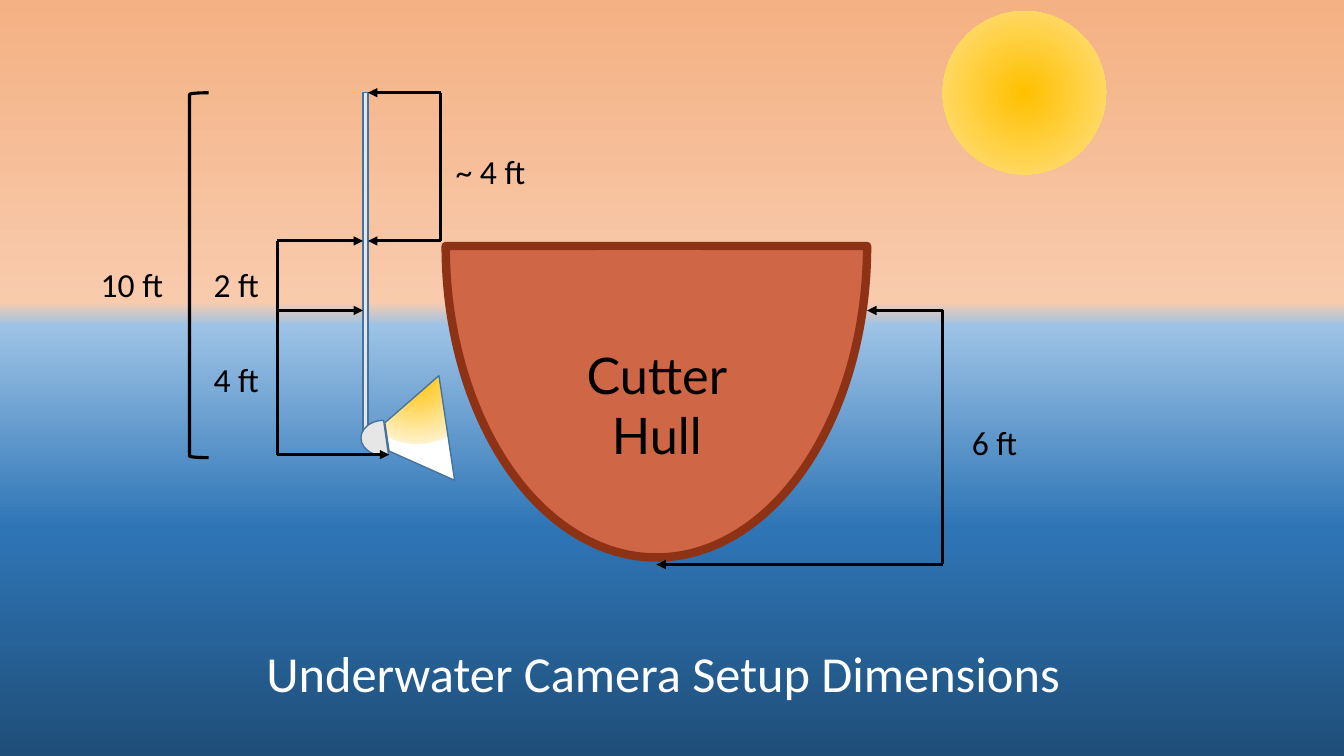
"""Build the underwater camera setup dimensions slide."""
from lxml import etree
from pptx import Presentation
from pptx import util as u
from pptx.dml.color import RGBColor
from pptx.enum import shapes, text
from pptx.oxml.ns import qn

BLACK = RGBColor(0, 0, 0)
WHITE = RGBColor(255, 255, 255)
HULL = RGBColor(0xCF, 0x66, 0x45)
HULL_EDGE = RGBColor(0x8D, 0x32, 0x15)
CAMERA = RGBColor(0xE7, 0xE6, 0xE6)
CAMERA_EDGE = RGBColor(0x43, 0x73, 0x9E)

SKY_AND_SEA = [(0, "F4B183"), (40, "F8CBAD"), (43, "9DC3E6"), (70, "2E75B6"), (100, "1F4E79")]
SUNLIGHT = [(0, "FFC000"), (75, "FFD966"), (100, "FFE699")]
LAMPLIGHT = [(0, "FFC000"), (100, "FFF2CC"), (100, "FFFFFF")]

POLE_TOP, DECK, WATERLINE, CAMERA_BOTTOM, KEEL = 0.92, 2.39, 3.08, 4.51, 5.6
POLE_LEFT, POLE_RIGHT = 3.6, 3.65
LEFT_RULE, MIDDLE_RULE, RIGHT_RULE = 2.75, 4.37, 9.35

ARROWS = [
    (MIDDLE_RULE, POLE_TOP, POLE_RIGHT), (MIDDLE_RULE, DECK, POLE_RIGHT),
    (LEFT_RULE, DECK, POLE_LEFT), (LEFT_RULE, WATERLINE, POLE_LEFT),
    (LEFT_RULE, CAMERA_BOTTOM, 3.86),
    (RIGHT_RULE, WATERLINE, 8.6), (RIGHT_RULE, KEEL, 6.51),
]
RULES = [
    (MIDDLE_RULE, POLE_TOP, DECK), (LEFT_RULE, DECK, WATERLINE),
    (LEFT_RULE, WATERLINE, CAMERA_BOTTOM), (RIGHT_RULE, WATERLINE, KEEL),
]
DIMENSIONS = [
    ("6 ft", 9.54, 4.14, 0.9), ("~ 4 ft", 4.42, 1.45, 1.01), ("2 ft", 2.02, 2.57, 0.9),
    ("4 ft", 2.02, 3.51, 0.79), ("10 ft", 0.9, 2.57, 0.93),
]


def set_gradient(fill, owner, stops, focus=None):
    fill.gradient()
    gradient = next(owner.iter(qn("a:gradFill")))
    for child in list(gradient):
        gradient.remove(child)
    gradient.set("rotWithShape", "0")
    stop_list = etree.SubElement(gradient, qn("a:gsLst"))
    for position, color in stops:
        stop = etree.SubElement(stop_list, qn("a:gs"), pos=str(position * 1000))
        etree.SubElement(stop, qn("a:srgbClr"), val=color)
    if focus:
        circle = etree.SubElement(gradient, qn("a:path"), path="circle")
        edges = {side: str(value * 1000) for side, value in zip("ltrb", focus)}
        etree.SubElement(circle, qn("a:fillToRect"), **edges)
    else:
        etree.SubElement(gradient, qn("a:lin"), ang="5400000", scaled="0")


def add_shape(slide, kind, box, fill=None, line=None, width=1, adjustments=(), rotation=0):
    shape = slide.shapes.add_shape(kind, *map(u.Inches, box))
    shape.shadow.inherit = False
    shape.rotation = rotation
    for index, value in enumerate(adjustments):
        shape.adjustments[index] = value
    if fill is None:
        shape.fill.background()
    else:
        shape.fill.solid()
        shape.fill.fore_color.rgb = fill
    if line is None:
        shape.line.fill.background()
    else:
        shape.line.color.rgb = line
        shape.line.width = u.Pt(width)
    return shape


def add_line(slide, start, end, color=BLACK, width=2.25, arrow=False):
    connector = slide.shapes.add_connector(
        shapes.MSO_CONNECTOR.STRAIGHT, *map(u.Inches, start + end))
    connector.line.color.rgb = color
    connector.line.width = u.Pt(width)
    if arrow:
        etree.SubElement(connector.line._get_or_add_ln(), qn("a:tailEnd"), type="triangle")
    etree.SubElement(connector._element.spPr, qn("a:effectLst"))


def add_text(slide, lines, box, size, font="Calibri", color=BLACK, align=text.PP_ALIGN.LEFT):
    frame = slide.shapes.add_textbox(*map(u.Inches, box)).text_frame
    frame.word_wrap = True
    frame.text = "\n".join(lines)
    for paragraph in frame.paragraphs:
        paragraph.alignment = align
        paragraph.font.size = u.Pt(size)
        paragraph.font.name = font
        paragraph.font.color.rgb = color


def main():
    presentation = Presentation()
    presentation.slide_width, presentation.slide_height = u.Inches(13.33), u.Inches(7.5)
    slide = presentation.slides.add_slide(presentation.slide_layouts[6])
    set_gradient(slide.background.fill, slide._element, SKY_AND_SEA)
    kinds = shapes.MSO_SHAPE
    center = text.PP_ALIGN.CENTER

    add_shape(slide, kinds.BLOCK_ARC, (4.42, -0.65, 4.18, 6.18), HULL, HULL_EDGE, 6,
              (108, 0, 0.499), 180)
    add_shape(slide, kinds.RECTANGLE, (5.94, 2.44, 1.01, 2.38), HULL, HULL)
    add_line(slide, (5.86, 2.44), (7.03, 2.44), HULL_EDGE, 6)
    add_text(slide, ["Cutter", "Hull"], (5.01, 3.36, 3.01, 1.31), 36, "Lato", align=center)

    sun = add_shape(slide, kinds.FLOWCHART_CONNECTOR, (9.35, 0.11, 1.62, 1.62))
    set_gradient(sun.fill, sun._element, SUNLIGHT, (50, 50, 50, 50))

    add_shape(slide, kinds.RECTANGLE, (POLE_LEFT, POLE_TOP, 0.05, 3.45), CAMERA, CAMERA_EDGE)
    add_shape(slide, kinds.CHORD, (3.58, 4.17, 0.45, 0.35), CAMERA, CAMERA_EDGE,
              adjustments=(44.452, 162))
    beam = add_shape(slide, kinds.TRAPEZOID, (3.61, 3.99, 1.05, 0.6), line=CAMERA_EDGE,
                     adjustments=(0.639,), rotation=261.5)
    set_gradient(beam.fill, beam._element, LAMPLIGHT, (50, -80, 50, 180))

    for start, level, end in ARROWS:
        add_line(slide, (start, level), (end, level), arrow=True)
    for position, top, bottom in RULES:
        add_line(slide, (position, top), (position, bottom))
    add_shape(slide, kinds.LEFT_BRACKET, (1.88, POLE_TOP, 0.19, 3.62), line=BLACK, width=2.25)
    for label, left, top, width in DIMENSIONS:
        add_text(slide, [label], (left, top, width, 0.5), 24)
    add_text(slide, ["Underwater Camera Setup Dimensions"], (2.18, 6.32, 8.8, 0.71), 36,
             color=WHITE, align=center)
    presentation.save("out.pptx")


if __name__ == "__main__":
    main()
